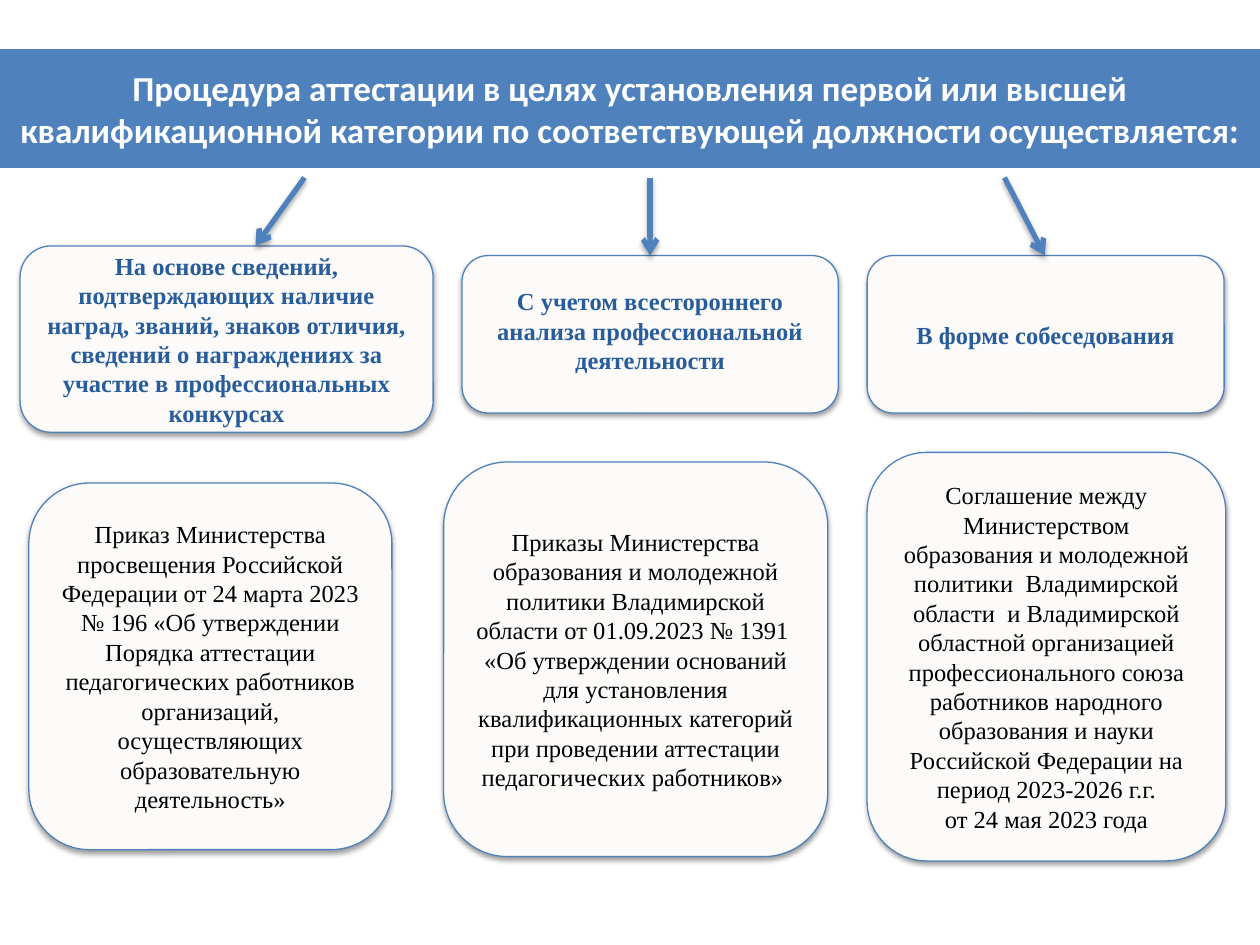
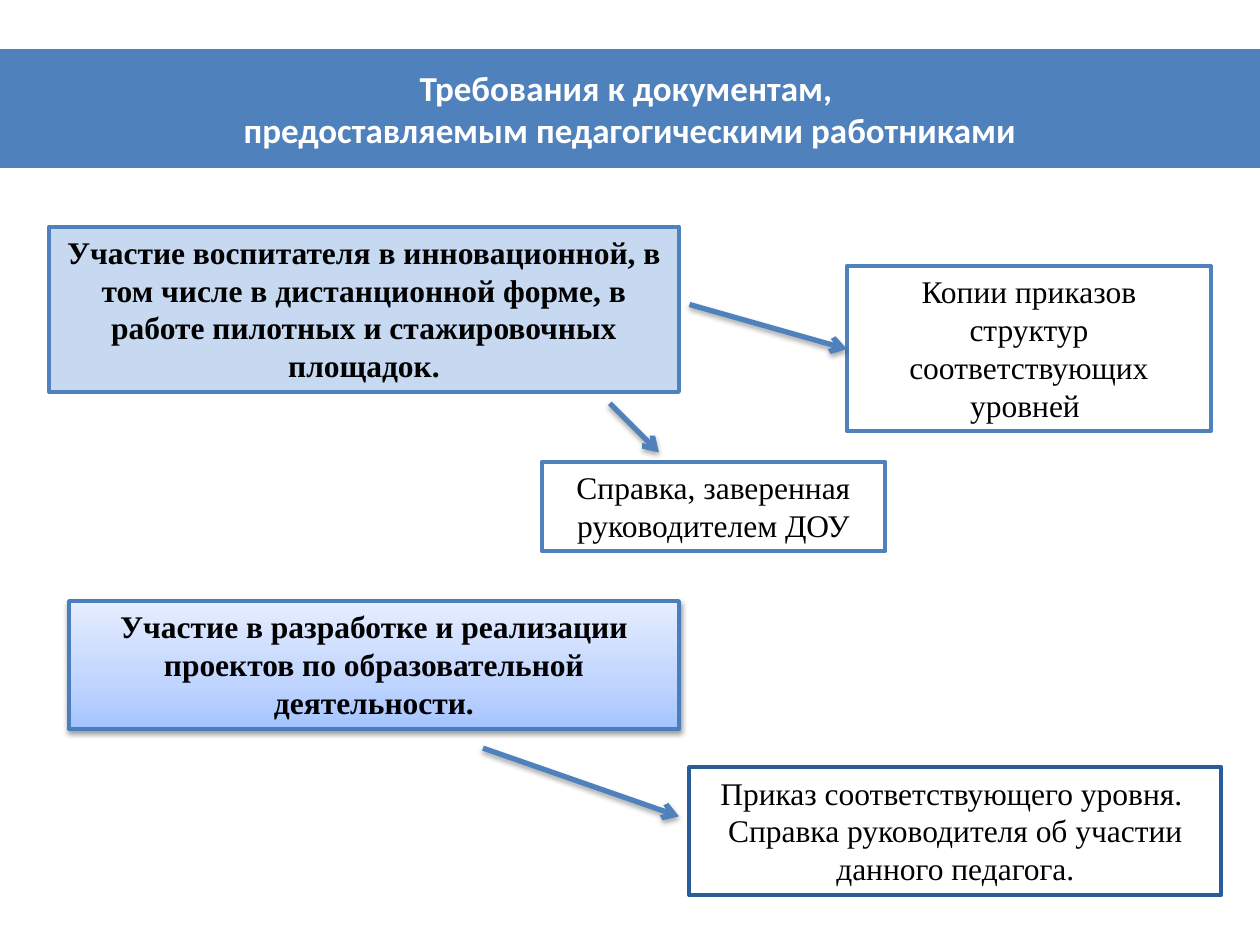
from lxml.etree import SubElement
from copy import deepcopy
from pptx import Presentation
from pptx.dml.color import RGBColor
from pptx.enum.shapes import MSO_CONNECTOR as Connector, MSO_SHAPE as Shape
from pptx.enum.text import MSO_ANCHOR as Anchor, MSO_AUTO_SIZE as AutoSize, PP_ALIGN as Align
from pptx.oxml.ns import qn
from pptx.util import Pt

COLORS = {
    "blue": "4F81BD", "dark blue": "275C9D", "mid blue": "4B7EBC", "pale blue": "C6D9F1",
    "paper": "FCFBF9", "white": "FFFFFF", "black": "000000",
}
GRADIENT = [(0, "A4C4FF"), (0.35, "BFD4FF"), (1, "E6EEFF")]  # bottom to top
SERIF = "Times New Roman"
BAND = (0, 28, 720, 68)
CARD_SHADOW, ARROW_SHADOW = (38, 1.6), (35, 1.8)  # opacity in %, distance

PROCEDURE_TITLE = [
    "Процедура аттестации в целях установления первой или высшей "
    "квалификационной категории по соответствующей должности осуществляется:"
]
# (left, top, width, height), paragraphs, extra bottom inset
WAYS = [
    ((11.5, 140.5, 236, 106.5), [
        "На основе сведений, подтверждающих наличие наград, званий, знаков отличия, "
        "сведений о награждениях за участие в профессиональных конкурсах"], 0),
    ((264, 146, 215, 90), ["С учетом всестороннего анализа профессиональной деятельности"], 4.6),
    ((495.5, 146, 204, 90), ["В форме собеседования"], 0),
]
GROUNDS = [
    ((16.5, 276, 207.5, 209.5), [
        "Приказ Министерства просвещения Российской Федерации от 24 марта 2023 № 196 "
        "«Об утверждении Порядка аттестации педагогических работников организаций, "
        "осуществляющих образовательную деятельность»"]),
    ((253.5, 264, 219.5, 225.5), [
        "Приказы Министерства образования и молодежной политики Владимирской области "
        "от 01.09.2023 № 1391 ",
        "«Об утверждении оснований для установления квалификационных категорий при "
        "проведении аттестации педагогических работников» "]),
    ((495.5, 258.5, 205, 233.5), [
        "Соглашение между Министерством образования и молодежной политики  Владимирской "
        "области  и Владимирской областной организацией профессионального союза работников "
        "народного образования и науки Российской Федерации на период 2023-2026 г.г.",
        "от 24 мая 2023 года"]),
]
WAY_ARROWS = [
    ((174, 101.5), (146, 140.5)),
    ((371.5, 101.5), (371.5, 146)),
    ((574, 101.5), (597, 146)),
]

DOCUMENTS_TITLE = ["Требования к документам, ", "предоставляемым педагогическими работниками"]
# (left, top, width, height), paragraphs, fill, line colour, bold
DOCUMENT_BOXES = [
    ((28, 129.5, 360, 94.5), [
        "Участие воспитателя в инновационной, в том числе в дистанционной форме, "
        "в работе пилотных и стажировочных площадок."], "pale blue", "blue", True),
    ((484, 152, 208, 94.5), ["Копии приказов структур соответствующих уровней "],
     None, "blue", False),
    ((309.5, 264, 196.5, 51), ["Справка, заверенная руководителем ДОУ"], None, "blue", False),
    ((39.5, 343.5, 348.5, 73), [
        "Участие в разработке и реализации проектов по образовательной деятельности."],
     "gradient", "mid blue", True),
    ((394, 438.5, 304, 73), [
        "Приказ соответствующего уровня. ",
        "Справка руководителя об участии данного педагога."], None, "dark blue", False),
]
DOCUMENT_ARROWS = [
    ((394, 174), (484, 199.5)),
    ((348.5, 230.5), (376.5, 258.5)),
    ((276, 427.5), (388, 466.5)),
]


def color(name):
    return RGBColor.from_string(COLORS[name])


def points(values):
    return [Pt(value) for value in values]


def write(shape, paragraphs, size, font_name, text_color, bold=False, anchor=Anchor.MIDDLE):
    frame = shape.text_frame
    frame.word_wrap = True
    frame.auto_size = AutoSize.NONE
    frame.vertical_anchor = anchor
    for index, text in enumerate(paragraphs):
        paragraph = frame.add_paragraph() if index else frame.paragraphs[0]
        paragraph.alignment = Align.CENTER
        run = paragraph.add_run()
        run.text = text
        font = run.font
        font.size, font.name, font.bold = Pt(size), font_name, bold
        font.color.rgb = color(text_color)


def add_shadow(properties, opacity, distance):
    """Put a soft downward shadow at the end of the shape properties."""
    effects = properties.find(qn("a:effectLst"))
    if effects is None:
        effects = SubElement(properties, qn("a:effectLst"))
    shadow = SubElement(effects, qn("a:outerShdw"), blurRad=str(Pt(3.1)),
                        dist=str(Pt(distance)), dir="5400000", rotWithShape="0")
    tint = SubElement(shadow, qn("a:srgbClr"), val=COLORS["black"])
    SubElement(tint, qn("a:alpha"), val=str(opacity * 1000))


def fill_gradient(shape):
    fill = shape.fill
    fill.gradient()
    fill.gradient_angle = 90
    stop_list = shape.element.spPr.find(qn("a:gradFill")).find(qn("a:gsLst"))
    stop_list.append(deepcopy(stop_list[-1]))
    for stop, (position, hex_color) in zip(fill.gradient_stops, GRADIENT):
        stop.position = position
        stop.color.rgb = RGBColor.from_string(hex_color)


def add_box(slide, kind, place, fill, line_color, line_width, shadowed):
    shape = slide.shapes.add_shape(kind, *points(place))
    shape.shadow.inherit = False
    if fill == "gradient":
        fill_gradient(shape)
    elif fill:
        shape.fill.solid()
        shape.fill.fore_color.rgb = color(fill)
    else:
        shape.fill.background()
    shape.line.color.rgb = color(line_color)
    shape.line.width = Pt(line_width)
    if shadowed:
        add_shadow(shape.element.spPr, *CARD_SHADOW)
    return shape


def add_card(slide, place, paragraphs, text_color, bold, extra_bottom=0):
    card = add_box(slide, Shape.ROUNDED_RECTANGLE, place, "paper", "blue", 0.75, True)
    write(card, paragraphs, 14, SERIF, text_color, bold)
    card.text_frame.margin_bottom = Pt(3.6 + extra_bottom)


def add_arrow(slide, start, end):
    arrow = slide.shapes.add_connector(Connector.STRAIGHT, *points(start + end))
    arrow.line.color.rgb = color("blue")
    arrow.line.width = Pt(3)
    SubElement(arrow.line._get_or_add_ln(), qn("a:tailEnd"), type="arrow")
    add_shadow(arrow._element.spPr, *ARROW_SHADOW)


def add_titled_slide(presentation, title_lines):
    slide = presentation.slides.add_slide(presentation.slide_layouts[5])
    title = slide.shapes.title
    title.left, title.top, title.width, title.height = points(BAND)
    title.fill.solid()
    title.fill.fore_color.rgb = color("blue")
    write(title, title_lines, 20, "Calibri", "white", bold=True)
    return slide


def build_procedure(presentation):
    slide = add_titled_slide(presentation, PROCEDURE_TITLE)
    for place, paragraphs, extra_bottom in WAYS:
        add_card(slide, place, paragraphs, "dark blue", True, extra_bottom)
    for place, paragraphs in GROUNDS:
        add_card(slide, place, paragraphs, "black", False)
    for start, end in WAY_ARROWS:
        add_arrow(slide, start, end)


def build_documents(presentation):
    slide = add_titled_slide(presentation, DOCUMENTS_TITLE)
    for place, paragraphs, fill, line_color, bold in DOCUMENT_BOXES:
        box = add_box(slide, Shape.RECTANGLE, place, fill, line_color, 2.25, fill == "gradient")
        write(box, paragraphs, 18, SERIF, "black", bold, Anchor.TOP)
    for start, end in DOCUMENT_ARROWS:
        add_arrow(slide, start, end)


def main():
    presentation = Presentation()
    presentation.slide_width, presentation.slide_height = Pt(720), Pt(540)
    build_procedure(presentation)
    build_documents(presentation)
    presentation.save("out.pptx")


if __name__ == "__main__":
    main()
